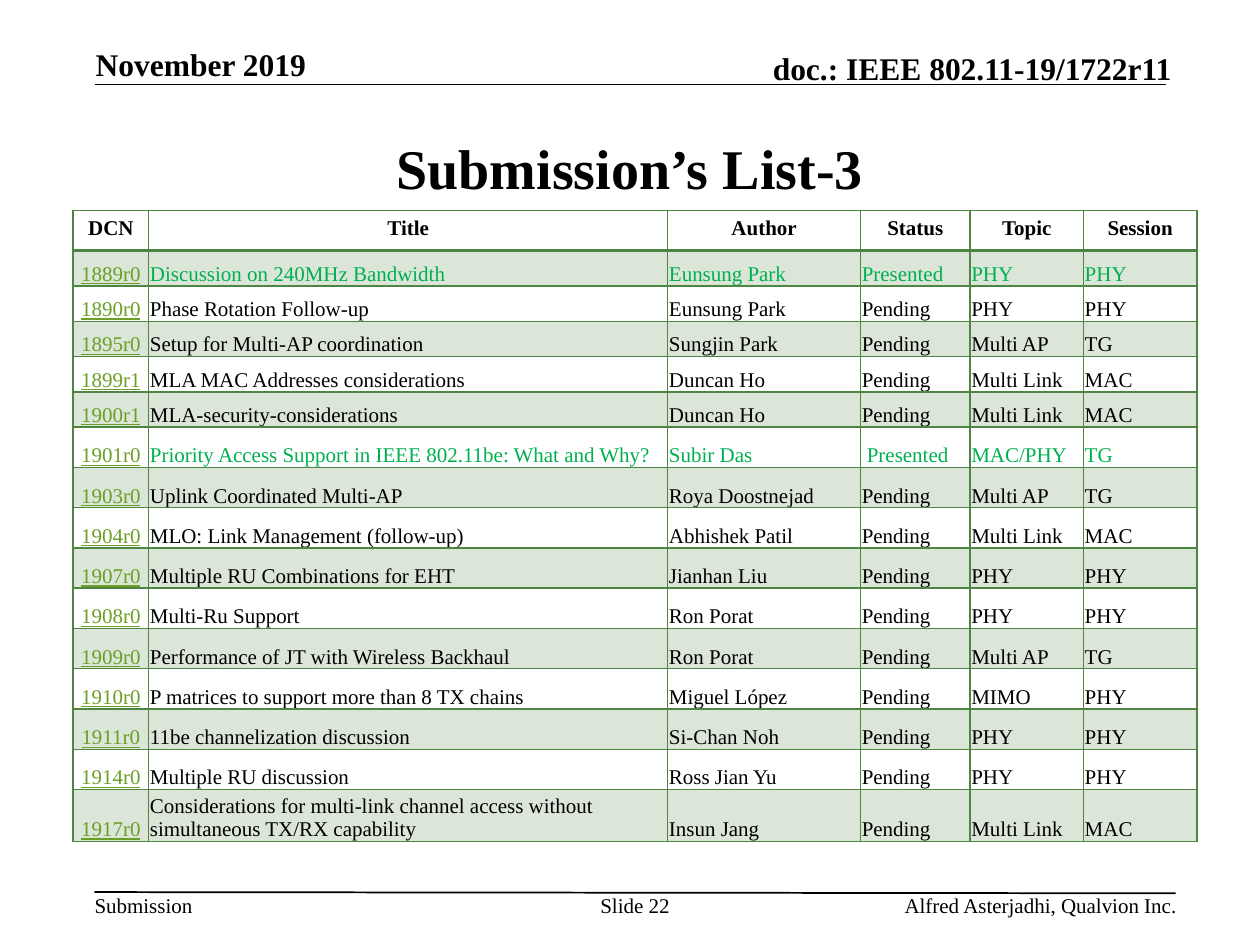
from typing import NamedTuple

from lxml import etree
from pptx import Presentation, util as u
from pptx.dml.color import RGBColor
from pptx.enum import shapes, text
from pptx.oxml.ns import qn

FONT = "Times New Roman"
HUES = {"ink": "000000", "link": "6B9F25", "done": "00B050", "grid": "4E8542"}
LEFT, MID, RIGHT = text.PP_ALIGN.LEFT, text.PP_ALIGN.CENTER, text.PP_ALIGN.RIGHT
TOP, CORE, LOW = (text.MSO_ANCHOR.TOP, text.MSO_ANCHOR.MIDDLE,
                  text.MSO_ANCHOR.BOTTOM)


class Label(NamedTuple):
    words: str
    box: tuple[float, float, float, float]
    size: int = 12
    bold: bool = False
    align: text.PP_ALIGN = LEFT
    anchor: text.MSO_ANCHOR = TOP
    wrap: bool = True


class Entry(NamedTuple):
    code: str
    title: str
    author: str
    status: str
    topic: str
    group: str


LABELS = [
    Label("Submission", (0.75, 7.08, 0.78, 0.2), wrap=False),
    Label("doc.: IEEE 802.11-19/1722r11", (5.47, 0.39, 3.83, 0.3), 18, True, RIGHT, LOW),
    Label("Submission’s List-3", (0.75, 0.75, 8.5, 1.16), 32, True, MID, CORE),
    Label("November 2019", (0.76, 0.36, 2.05, 0.3), 18, True, LEFT, LOW),
    Label("Alfred Asterjadhi, Qualvion Inc.", (5.86, 7.08, 3.48, 0.2), align=RIGHT),
    Label("Slide 22", (4.75, 7.08, 0.58, 0.4), align=MID),
]
RULES = [(0.75, 0.67, 9.25, 0.67), (0.75, 7.08, 9.33, 7.09)]

HEADS = ["DCN", "Title", "Author", "Status", "Topic", "Session"]
WIDTHS = [0.6, 4.12, 1.53, 0.87, 0.9, 0.9]
HEIGHTS = [0.32] + [0.28] * 5 + [0.32] * 10
ENTRIES = [
    Entry("1889r0", "Discussion on 240MHz Bandwidth", "Eunsung Park", "Presented", "PHY", "PHY"),
    Entry("1890r0", "Phase Rotation Follow-up", "Eunsung Park", "Pending", "PHY", "PHY"),
    Entry("1895r0", "Setup for Multi-AP coordination", "Sungjin Park", "Pending", "Multi AP", "TG"),
    Entry("1899r1", "MLA MAC Addresses considerations", "Duncan Ho", "Pending", "Multi Link", "MAC"),
    Entry("1900r1", "MLA-security-considerations", "Duncan Ho", "Pending", "Multi Link", "MAC"),
    Entry("1901r0", "Priority Access Support in IEEE 802.11be: What and Why?", "Subir Das",
          "Presented", "MAC/PHY", "TG"),
    Entry("1903r0", "Uplink Coordinated Multi-AP", "Roya Doostnejad", "Pending", "Multi AP", "TG"),
    Entry("1904r0", "MLO: Link Management (follow-up)", "Abhishek Patil", "Pending", "Multi Link", "MAC"),
    Entry("1907r0", "Multiple RU Combinations for EHT", "Jianhan Liu", "Pending", "PHY", "PHY"),
    Entry("1908r0", "Multi-Ru Support", "Ron Porat", "Pending", "PHY", "PHY"),
    Entry("1909r0", "Performance of JT with Wireless Backhaul", "Ron Porat", "Pending", "Multi AP", "TG"),
    Entry("1910r0", "P matrices to support more than 8 TX chains", "Miguel López", "Pending", "MIMO", "PHY"),
    Entry("1911r0", "11be channelization discussion", "Si-Chan Noh", "Pending", "PHY", "PHY"),
    Entry("1914r0", "Multiple RU discussion", "Ross Jian Yu", "Pending", "PHY", "PHY"),
    Entry("1917r0", "Considerations for multi-link channel access without simultaneous TX/RX capability",
          "Insun Jang", "Pending", "Multi Link", "MAC"),
]
INDENTS = {("1901r0", "Status"): 0.05}  # cells set in from the usual margin


def write(frame, words: str, size: int = 12, bold: bool = False,
          hue: str = "ink", align: text.PP_ALIGN = LEFT, under: bool = False) -> None:
    para = frame.paragraphs[0]
    para.alignment = align
    run = para.add_run()
    run.text = words
    font = run.font
    font.name, font.size, font.bold = FONT, u.Pt(size), bold
    font.underline = under
    font.color.rgb = RGBColor.from_string(HUES[hue])


def add_label(slide, item: Label) -> None:
    frame = slide.shapes.add_textbox(*map(u.Inches, item.box)).text_frame
    frame.margin_left = frame.margin_right = 0
    frame.margin_top = frame.margin_bottom = 0
    frame.word_wrap = item.wrap
    frame.vertical_anchor = item.anchor
    write(frame, item.words, item.size, item.bold, align=item.align)


def add_rule(slide, ends: tuple[float, float, float, float]) -> None:
    line = slide.shapes.add_connector(shapes.MSO_CONNECTOR.STRAIGHT, *map(u.Inches, ends))
    line.line.color.rgb = RGBColor.from_string(HUES["ink"])
    line.line.width = u.Pt(1)
    etree.SubElement(line._element.spPr, qn("a:effectLst"))


def paint(cell, tint: bool, above: float = 1, below: float = 1) -> None:
    """Set the fill of a cell, then its four borders."""
    if tint:
        cell.fill.solid()
        cell.fill.fore_color.rgb = RGBColor.from_string(HUES["grid"])
    else:
        cell.fill.background()
    props = cell._tc.get_or_add_tcPr()
    for hue in props.iter(qn("a:srgbClr")):
        etree.SubElement(hue, qn("a:alpha"), val="20000")
    edges = {"lnL": 1, "lnR": 1, "lnT": above, "lnB": below}
    for spot, (name, width) in enumerate(edges.items()):
        edge = etree.Element(qn(f"a:{name}"), w=str(u.Pt(width)))
        fill = etree.SubElement(edge, qn("a:solidFill"))
        etree.SubElement(fill, qn("a:srgbClr"), val=HUES["grid"])
        props.insert(spot, edge)


def add_list(slide) -> None:
    frame = slide.shapes.add_table(len(HEIGHTS), len(WIDTHS), u.Inches(0.58), u.Inches(1.67),
                                   u.Inches(sum(WIDTHS)), u.Inches(sum(HEIGHTS)))
    table = frame.table
    table.first_row = table.horz_banding = False
    for col, width in zip(table.columns, WIDTHS):
        col.width = u.Inches(width)
    for row, height in zip(table.rows, HEIGHTS):
        row.height = u.Inches(height)

    # Heading row
    for col, head in enumerate(HEADS):
        cell = table.cell(0, col)
        write(cell.text_frame, head, bold=True, align=MID)
        paint(cell, False, below=2)

    # Submissions
    for row, entry in enumerate(ENTRIES, 1):
        tone = "done" if entry.status == "Presented" else "ink"
        for col, words in enumerate(entry):
            cell = table.cell(row, col)
            cell.vertical_anchor = LOW
            cell.margin_left = u.Inches(INDENTS.get((entry.code, HEADS[col]), 0.01))
            cell.margin_right = cell.margin_top = u.Inches(0.01)
            cell.margin_bottom = 0
            code = col == 0
            write(cell.text_frame, words, hue="link" if code else tone,
                  align=MID if code else LEFT, under=code)
            paint(cell, row % 2 == 1, above=2 if row == 1 else 1)


def main() -> None:
    deck = Presentation()
    deck.slide_width, deck.slide_height = u.Inches(10), u.Inches(7.5)
    slide = deck.slides.add_slide(deck.slide_layouts[6])
    # Page frame
    for ends in RULES:
        add_rule(slide, ends)
    for item in LABELS:
        add_label(slide, item)
    # Submission table
    add_list(slide)
    deck.save("out.pptx")


if __name__ == "__main__":
    main()
